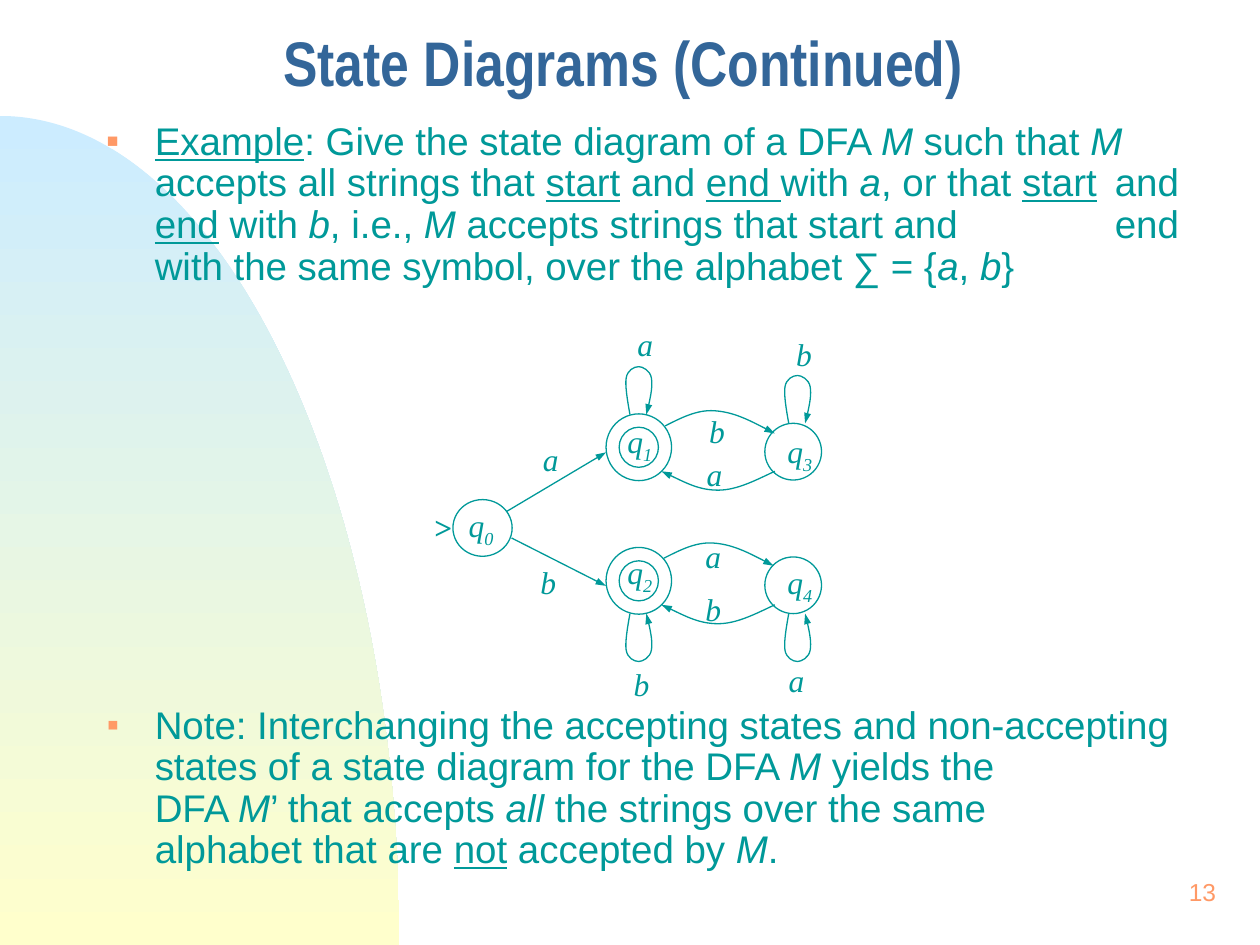
from pptx import Presentation
from pptx.dml.color import RGBColor as RGB
from pptx.enum.shapes import MSO_CONNECTOR as Link, MSO_SHAPE as Form
from pptx.enum.text import MSO_ANCHOR as Anchor, PP_ALIGN as Align
from pptx.oxml.ns import qn
from pptx.util import Inches, Pt
from lxml.etree import SubElement as Sub

HUES = {"ink": "009999", "title": "336699", "mark": "FF9966",
        "sky": "CCECFF", "sand": "FFFFCC", "white": "FFFFFF"}
CELL = Inches(10) / 100
SANS, SERIF = "Arial", "Times New Roman"

TITLE = "State Diagrams (Continued)"
PAGE = "13"
NOTES = [
    (0, "■", 50,
     "_Example_: Give the state diagram of a DFA *M* such that *M* accepts all "
     "strings that _start_ and _end _with *a*, or that _start_ \tand _end_ with "
     "*b*, i.e., *M* accepts strings that start and\t\tend with the same symbol, "
     "over the alphabet ∑ = {*a*, *b*}"),
    (238.5, "▪", 90,
     "Note: Interchanging the accepting states and non-accepting states of a "
     "state diagram for the DFA *M* yields the\nDFA *M*’ that accepts *all* the "
     "strings over the same\nalphabet that are _not_ accepted by *M*."),
]

STATES = [
    ("0", 38.3, 41.9, 4.7, 4.5, False, 36.2, 39.7),
    ("1", 50.7, 35.5, 5.2, 5.3, True, 48.8, 33),
    ("2", 50.7, 46.1, 5.2, 5.3, True, 48.8, 43.4),
    ("3", 62.95, 35.85, 4.5, 4.5, False, 61.5, 33.8),
    ("4", 62.95, 46.45, 4.5, 4.5, False, 61.5, 44.2),
]
LABELS = {
    "a": [(61.6, 52), (49.6, 25.3), (55, 42.1), (55.1, 35.6), (42.1, 34.4)],
    "b": [(49.3, 52.3), (62.2, 26.1), (55.3, 32.2), (41.9, 44.2), (55, 46.3)],
}
SPAN = {"a": 2.2, "b": 3}

LOOP = [(0, 0), (-.2, -1.1), (-.4, -2.3), (-.3, -2.9), (-.2, -3.5), (.3, -3.8),
        (.7, -3.8), (1, -3.8), (1.6, -3.5), (1.7, -2.9), (1.8, -2.3),
        (1.6, -1.1), (1.3, 0)]
OVER = [(0, 0), (1.2, -.6), (2.5, -1.3), (3.9, -1.2), (5.4, -1.1), (7, -.3),
        (8.7, .6)]
UNDER = [(0, 0), (-1.5, .7), (-3, 1.5), (-4.5, 1.5), (-6, 1.5), (-7.5, .7),
         (-9, 0)]
DOME = [(0, 0), (17.5, 0), (31.7, 29.5), (31.7, 65.8)]
ARCS = [
    (LOOP, 50, 32.9, 1), (LOOP, 62.6, 33.6, 1),
    (LOOP, 50, 48.7, -1), (LOOP, 62.6, 48.7, -1),
    (OVER, 52.8, 33.8, 1), (OVER, 52.7, 44.3, 1),
    (UNDER, 61.5, 37.4, 1), (UNDER, 61.5, 48, 1),
]
LINES = [(40.2, 40.6, 48.1, 35.9), (40.6, 42.7, 48.1, 46.5)]


def at(*cells):
    return [round(c * CELL) for c in cells]


def hue(name):
    return RGB.from_string(HUES[name])


def curve(knots, x, y, flip=1, corner=None):
    dots = [at(x + dx, y + flip * dy) for dx, dy in knots]
    tail = [at(*corner)] if corner else []
    pen = shapes.build_freeform(*dots[0])
    pen.add_line_segments(dots[1:] + tail, close=bool(corner))
    shape = pen.convert_to_shape()
    shape.shadow.inherit = False
    legs = list(shape._element.iter(qn("a:lnTo")))
    for k in range(0, len(knots) - 1, 3):
        bend, *rest = legs[k:k + 3]
        bow = bend.makeelement(qn("a:cubicBezTo"))
        bend.addprevious(bow)
        for leg in (bend, *rest):
            bow.append(leg[0])
            leg.getparent().remove(leg)
    return shape


def ink(shape, tip=False):
    shape.line.color.rgb = hue("ink")
    shape.line.width = Pt(.75)
    if tip:
        Sub(shape.line._get_or_add_ln(), qn("a:tailEnd"), type="triangle",
            w="sm", len="med")


def style(para, size, font, tone="ink", **look):
    para.font.size, para.font.name = Pt(size), font
    para.font.color.rgb = hue(tone)
    for key, val in look.items():
        setattr(para.font, key, val)


def box(x, y, w, h):
    frame = shapes.add_textbox(*at(x, y, w, h)).text_frame
    frame.word_wrap = True
    return frame, frame.paragraphs[0]


def label(words, x, y, w, h, size, font, tone="ink", **look):
    frame, para = box(x, y, w, h)
    style(para, size, font, tone, **look)
    para.add_run().text = words
    return frame, para


def ring(x, y, w, h):
    oval = shapes.add_shape(Form.OVAL, *at(x - w / 2, y - h / 2, w, h))
    oval.shadow.inherit = False
    oval.fill.solid()
    oval.fill.fore_color.rgb = hue("white")
    ink(oval)


def bullet(para, sign, size):
    props = para._p.get_or_add_pPr()
    props.set("marL", str(Inches(.38)))
    props.set("indent", str(-Inches(.38)))
    props.set("defTabSz", str(Inches(1)))
    rest = props.find(qn("a:defRPr"))
    tint = Sub(props, qn("a:buClr"))
    Sub(tint, qn("a:srgbClr"), val=HUES["mark"])
    Sub(props, qn("a:buSzPct"), val=str(size * 1000))
    Sub(props, qn("a:buFont"), typeface=SANS)
    Sub(props, qn("a:buChar"), char=sign)
    props.append(rest)


def fill_in(para, words):
    for i, part in enumerate(words.split("*")):
        for j, bit in enumerate(part.split("_")):
            for k, row in enumerate(bit.split("\n")):
                if k:
                    para.add_line_break()
                if row:
                    run = para.add_run()
                    run.text = row
                    if i % 2:
                        run.font.italic = True
                    if j % 2:
                        run.font.underline = True


deck = Presentation()
deck.slide_width, deck.slide_height = at(100, 75)
shapes = deck.slides.add_slide(deck.slide_layouts[6]).shapes

dome = curve(DOME, 0, 9.2, corner=(0, 75))
dome.line.fill.background()
dome.fill.gradient()
dome.fill.gradient_angle = 270
for stop, tone, place in zip(dome.fill.gradient_stops, ("sky", "sand"), (0, 1)):
    stop.color.rgb, stop.position = hue(tone), place

frame, para = label(PAGE, 76.7, 68.3, 20.8, 5, 14, SANS, "mark")
frame.vertical_anchor, para.alignment = Anchor.MIDDLE, Align.RIGHT

frame, para = label(TITLE, 21.5, 2.7, 56.8, 5.8, 36, "Arial Narrow", "title",
                    bold=True)
frame.vertical_anchor, para.line_spacing = Anchor.MIDDLE, .7

frame, para = box(7.5, 9.2, 89.8, 64.2)
for gap, sign, size, words in NOTES:
    if gap:
        para = frame.add_paragraph()
    style(para, 22, SANS)
    para.line_spacing, para.space_before = .9, Pt(gap)
    bullet(para, sign, size)
    fill_in(para, words)

for name, x, y, w, h, final, left, top in STATES:
    ring(x, y, w, h)
    if final:
        ring(x, y, w * .6, h * .6)
    frame, para = label("q", left, top, 5.2, 4, 18, SERIF, italic=True)
    low = para.add_run()
    low.text = name
    low.font._element.set("baseline", "-25000")

for arc in ARCS:
    bow = curve(*arc)
    bow.fill.background()
    ink(bow, tip=True)

for ends in LINES:
    line = shapes.add_connector(Link.STRAIGHT, *at(*ends))
    ink(line, tip=True)
    Sub(line._element.spPr, qn("a:effectLst"))

for sign, spots in LABELS.items():
    for x, y in spots:
        label(sign, x, y, SPAN[sign], 4, 18, SERIF, italic=True)

label(">", 33.5, 39.8, 3.4, 4, 18, SERIF, bold=True)

deck.save("out.pptx")
